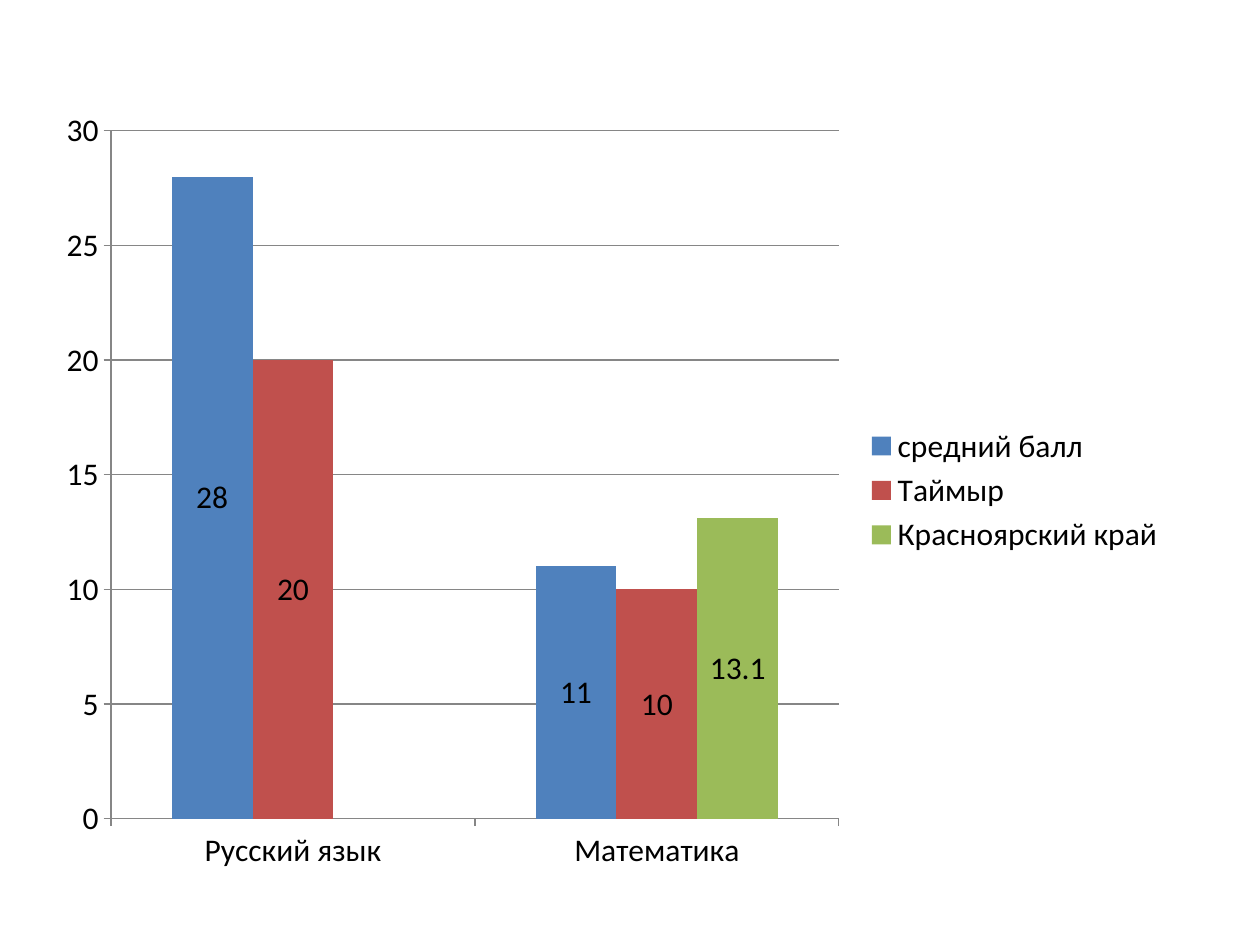
from pptx import Presentation
from pptx.chart.data import CategoryChartData
from pptx.dml.color import RGBColor
from pptx.enum.chart import XL_CHART_TYPE as ChartType
from pptx.enum.chart import XL_LABEL_POSITION as LabelPosition
from pptx.enum.chart import XL_LEGEND_POSITION as LegendPosition
from pptx.enum.chart import XL_TICK_MARK as TickMark
from pptx.util import Emu, Pt

EMU_PER_PX = 914400 // 126
COLORS = {
    "background": "FFFFFF",
    "text": "000000",
    "axis": "868686",
    "average": "4F81BD",
    "taimyr": "C0504D",
    "region": "9BBB59",
}
SUBJECTS = ["Русский язык", "Математика"]
SCORES = [
    ("средний балл", (28, 11), "average"),
    ("Таймыр", (20, 10), "taimyr"),
    ("Красноярский край", (None, 13.1), "region"),
]


def px(length):
    return Emu(length * EMU_PER_PX)


def color(name):
    return RGBColor.from_string(COLORS[name])


def style_font(font):
    font.name = "Calibri"
    font.size = Pt(18)
    font.color.rgb = color("text")


def style_line(line):
    line.color.rgb = color("axis")
    line.width = Pt(0.75)


def style_axis(axis):
    axis.major_tick_mark = TickMark.OUTSIDE
    axis.minor_tick_mark = TickMark.NONE
    style_line(axis.format.line)
    style_font(axis.tick_labels.font)


def style_series(series, fill_name):
    series.invert_if_negative = False
    series.format.fill.solid()
    series.format.fill.fore_color.rgb = color(fill_name)
    labels = series.data_labels
    labels.show_value = True
    labels.position = LabelPosition.CENTER
    style_font(labels.font)


def add_score_chart(slide, left, top, width, height):
    chart_data = CategoryChartData()
    chart_data.categories = SUBJECTS
    for name, values, _ in SCORES:
        chart_data.add_series(name, values)
    chart = slide.shapes.add_chart(
        ChartType.COLUMN_CLUSTERED, px(left), px(top), px(width), px(height), chart_data
    ).chart
    chart.has_title = False
    style_font(chart.font)

    plot = chart.plots[0]
    plot.gap_width = 150
    plot.overlap = 0
    plot.vary_by_categories = False
    for series, (_, _, fill_name) in zip(plot.series, SCORES):
        style_series(series, fill_name)

    style_axis(chart.category_axis)
    value_axis = chart.value_axis
    style_axis(value_axis)
    value_axis.minimum_scale = 0
    value_axis.maximum_scale = 30
    value_axis.major_unit = 5
    value_axis.has_major_gridlines = True
    style_line(value_axis.major_gridlines.format.line)

    chart.has_legend = True
    chart.legend.position = LegendPosition.RIGHT
    chart.legend.include_in_layout = False
    style_font(chart.legend.font)


def main():
    presentation = Presentation()
    presentation.slide_width = px(1260)
    presentation.slide_height = px(945)
    slide = presentation.slides.add_slide(presentation.slide_layouts[6])
    slide.background.fill.solid()
    slide.background.fill.fore_color.rgb = color("background")
    add_score_chart(slide, 44, 96, 1134, 789)
    presentation.save("out.pptx")


if __name__ == "__main__":
    main()
